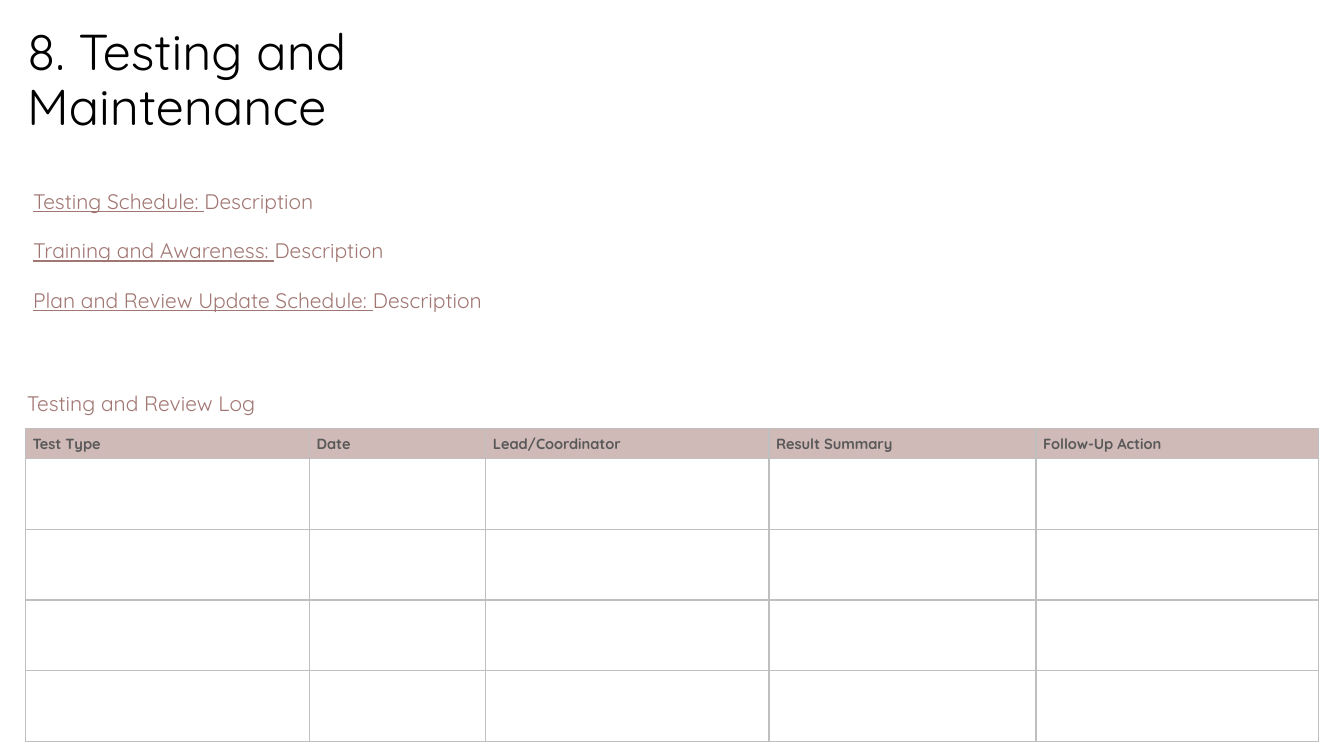
"""Build the Testing and Maintenance slide with its review log table."""
from lxml import etree
from pptx import Presentation
from pptx.dml.color import RGBColor
from pptx.enum.text import MSO_ANCHOR, MSO_AUTO_SIZE, PP_ALIGN
from pptx.oxml.ns import qn
from pptx.util import Cm, Pt

MIDDLE, TOP = MSO_ANCHOR.MIDDLE, MSO_ANCHOR.TOP
LEFT = PP_ALIGN.LEFT
NO_AUTOFIT = MSO_AUTO_SIZE.NONE

FONT = "Quicksand"
BLACK, WHITE, ROSE = "000000", "FFFFFF", "A17773"
HEADER_FILL, HEADER_TEXT, BORDER = "D0BAB8", "595959", "BFBFBF"

TITLE = "8. Testing and Maintenance"
TOPICS = ["Testing Schedule: ", "Training and Awareness: ", "Plan and Review Update Schedule: "]
TOPIC_TEXT = "Description"
LOG_HEADING = "Testing and Review Log"
LOG_COLUMNS = [
    ("Test Type", 7.16),
    ("Date", 4.44),
    ("Lead/Coordinator", 7.14),
    ("Result Summary", 6.73),
    ("Follow-Up Action", 7.11),
]
EMPTY_ROWS = 4
HEADER_HEIGHT, ROW_HEIGHT = 0.76, 1.78
CONTENT_WIDTH = 32.56


def color(value):
    return RGBColor.from_string(value)


def place(shape, left, top, width, height):
    shape.left, shape.top, shape.width, shape.height = Cm(left), Cm(top), Cm(width), Cm(height)


def prepare(shape, anchor):
    frame = shape.text_frame
    frame.word_wrap = True
    frame.auto_size = NO_AUTOFIT
    frame.vertical_anchor = anchor
    return frame


def add_run(paragraph, text, size, text_color, bold=False, underline=False):
    run = paragraph.add_run()
    run.text = text
    font = run.font
    font.name, font.size, font.bold, font.underline = FONT, Pt(size), bold, underline
    font.color.rgb = color(text_color)


def remove_bullet(paragraph):
    properties = paragraph._p.get_or_add_pPr()
    properties.set("marL", "0")
    properties.set("indent", "0")
    etree.SubElement(properties, qn("a:buNone"))


def format_cell(cell, fill):
    properties = cell._tc.get_or_add_tcPr()
    for side in ("a:lnL", "a:lnR", "a:lnT", "a:lnB"):
        line = etree.SubElement(properties, qn(side), w=str(Pt(1)))
        solid = etree.SubElement(line, qn("a:solidFill"))
        etree.SubElement(solid, qn("a:srgbClr"), val=BORDER)
    cell.fill.solid()
    cell.fill.fore_color.rgb = color(fill)


def add_title(slide):
    title = slide.shapes.title
    place(title, 0.43, 0.38, 12.04, 3.35)
    paragraph = prepare(title, MIDDLE).paragraphs[0]
    paragraph.alignment = LEFT
    paragraph.line_spacing = 0.9
    add_run(paragraph, TITLE, 36, BLACK)


def add_topics(slide):
    body = slide.placeholders[1]
    place(body, 0.58, 4.62, CONTENT_WIDTH, 4.24)
    frame = prepare(body, TOP)
    for index, topic in enumerate(TOPICS):
        paragraph = frame.add_paragraph() if index else frame.paragraphs[0]
        paragraph.space_before = Pt(17.25 if index else 0)
        remove_bullet(paragraph)
        add_run(paragraph, topic, 15, ROSE, underline=True)
        add_run(paragraph, TOPIC_TEXT, 15, ROSE)


def add_log(slide):
    heading = slide.shapes.add_textbox(Cm(0.43), Cm(9.7), Cm(CONTENT_WIDTH), Cm(0.9))
    add_run(prepare(heading, MIDDLE).paragraphs[0], LOG_HEADING, 15, ROSE)

    height = HEADER_HEIGHT + EMPTY_ROWS * ROW_HEIGHT
    table = slide.shapes.add_table(
        EMPTY_ROWS + 1, len(LOG_COLUMNS), Cm(0.64), Cm(10.8), Cm(CONTENT_WIDTH), Cm(height)
    ).table
    table.horz_banding = False
    for index, row in enumerate(table.rows):
        row.height = Cm(ROW_HEIGHT if index else HEADER_HEIGHT)
        for cell in row.cells:
            format_cell(cell, WHITE if index else HEADER_FILL)
    for index, (label, width) in enumerate(LOG_COLUMNS):
        table.columns[index].width = Cm(width)
        cell = table.cell(0, index)
        cell.vertical_anchor = MIDDLE
        cell.margin_left = cell.margin_right = Cm(0.18)
        cell.margin_top = cell.margin_bottom = 0
        paragraph = cell.text_frame.paragraphs[0]
        paragraph.space_after = Pt(8)
        add_run(paragraph, label, 10.5, HEADER_TEXT, bold=True)


def main():
    presentation = Presentation()
    presentation.slide_width, presentation.slide_height = Cm(33.87), Cm(19.05)
    slide = presentation.slides.add_slide(presentation.slide_layouts[1])
    add_title(slide)
    add_topics(slide)
    add_log(slide)
    presentation.save("out.pptx")


if __name__ == "__main__":
    main()
